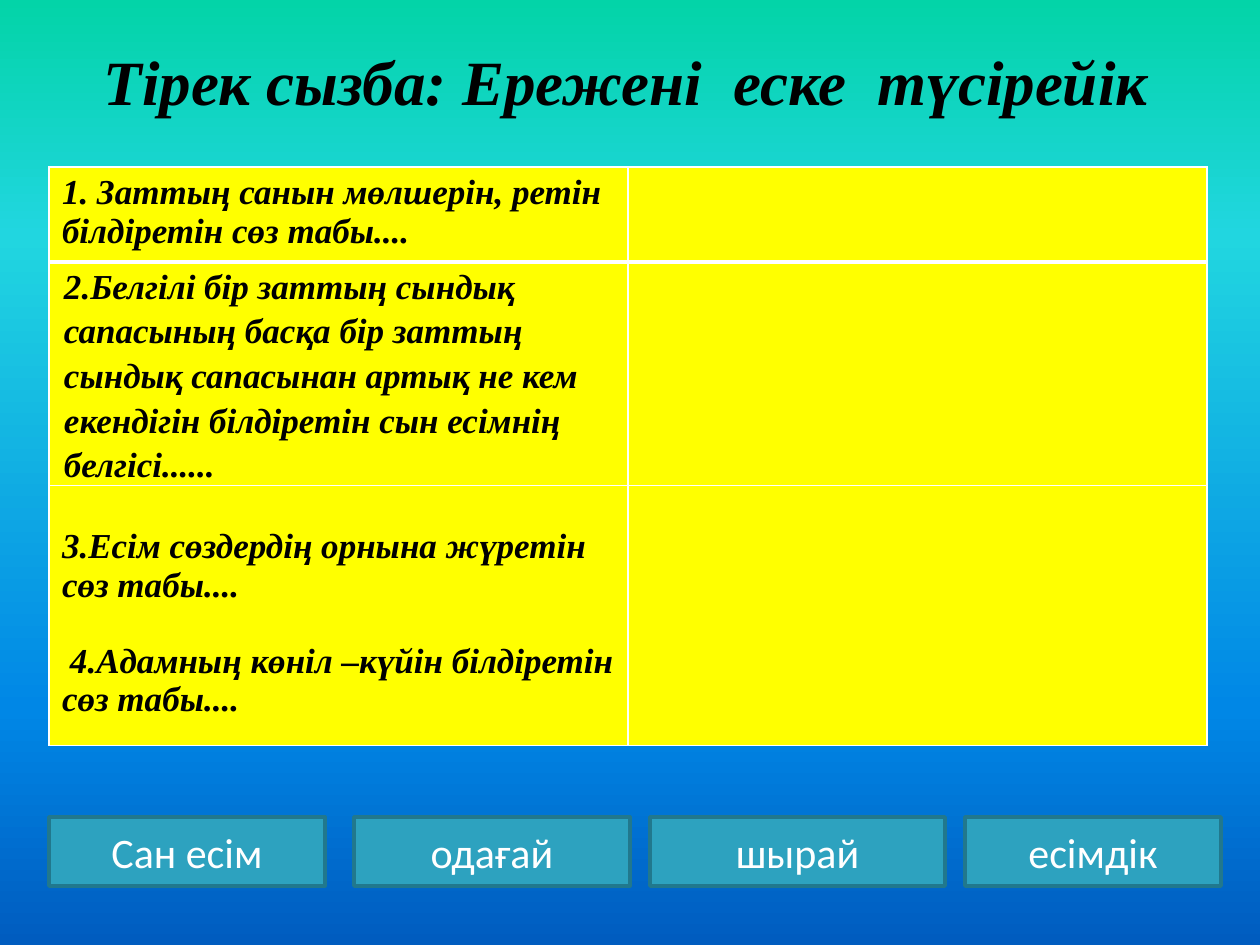
from typing import NamedTuple

from lxml.etree import SubElement
from pptx import Presentation
from pptx.dml.color import RGBColor
from pptx.enum.shapes import MSO_SHAPE as Shape
from pptx.enum.text import MSO_ANCHOR as Anchor, PP_ALIGN as Align
from pptx.oxml.ns import qn
from pptx.util import Emu, Pt

COLORS = {
    "black": "000000", "white": "FFFFFF", "yellow": "FFFF00",
    "teal": "2DA2BF", "edge": "21788D",
}
SKY = {0: "03D4A8", 25: "21D6E0", 75: "0087E6", 100: "005CBF"}
SERIF = "Times New Roman"


class Card(NamedTuple):
    text: str
    left: int
    width: int


class Rule(NamedTuple):
    """A table row: its height, top and side margins, and paragraphs."""
    height: int
    top: int
    side: int
    lines: list[str]
    spacing: float = 1.0


CARDS = [
    Card("Сан есім", 49, 276),
    Card("одағай", 354, 276),
    Card("шырай", 650, 295),
    Card("есімдік", 965, 256),
]
RULES = [
    Rule(95, 6, 13, ["1. Заттың санын мөлшерін, ретін білдіретін сөз табы...."]),
    Rule(223, 0, 15, ["2.Белгілі бір заттың сындық сапасының басқа бір заттың "
                      "сындық сапасынан артық не кем екендігін білдіретін "
                      "сын есімнің белгісі......"], 1.15),
    Rule(260, 42, 13, ["3.Есім сөздердің орнына жүретін сөз табы....",
                       "4.Адамның көніл –күйін білдіретін сөз табы...."]),
]


def px(count: int) -> Emu:
    return Emu(round(count * 914400 / 126))


def rgb(name: str) -> RGBColor:
    return RGBColor.from_string(COLORS[name])


def write(para, text: str, *, size: int, color: str = "black",
          font: str = SERIF, strong: bool = True, align=Align.LEFT) -> None:
    """Put one run in a paragraph; strong means bold italic."""
    para.alignment = align
    run = para.add_run()
    run.text = text
    face = run.font
    face.name, face.size = font, Pt(size)
    face.bold = face.italic = strong
    face.color.rgb = rgb(color)


def add_color(parent, code: str) -> None:
    SubElement(parent, qn("a:srgbClr"), val=code)


def paint_sky(slide) -> None:
    fill = slide.background.fill
    fill.gradient()
    grad = slide.element.find(".//" + qn("a:gradFill"))
    stops = grad.find(qn("a:gsLst"))
    for old in list(stops):
        stops.remove(old)
    for spot, code in SKY.items():
        add_color(SubElement(stops, qn("a:gs"), pos=str(spot * 1000)), code)
    grad.find(qn("a:lin")).set("ang", "5400000")


def style_cell(cell, top: int, base: int) -> None:
    """Fill a cell and give its edges white lines of the given points."""
    props = cell._tc.get_or_add_tcPr()
    for side, width in zip("LRTB", (1, 1, top, base)):
        line = SubElement(props, qn(f"a:ln{side}"), w=str(Pt(width)))
        add_color(SubElement(line, qn("a:solidFill")), COLORS["white"])
    cell.fill.solid()
    cell.fill.fore_color.rgb = rgb("yellow")


def fill_rule(cell, rule: Rule) -> None:
    cell.margin_left = cell.margin_right = px(rule.side)
    cell.margin_top, cell.margin_bottom = px(rule.top), px(min(rule.top, 6))
    frame = cell.text_frame
    for i, text in enumerate(rule.lines):
        para = frame.add_paragraph() if i else frame.paragraphs[0]
        para.line_spacing = rule.spacing
        if i:
            para.space_before = Pt(21)
            para._p.get_or_add_pPr().set("indent", str(px(8)))
        write(para, text, size=20)


def add_rules(slide) -> None:
    high = sum(rule.height for rule in RULES)
    table = slide.shapes.add_table(
        len(RULES), 2, px(49), px(167), px(1158), px(high)).table
    for i, rule in enumerate(RULES):
        table.rows[i].height = px(rule.height)
        for cell in table.rows[i].cells:
            style_cell(cell, 3 if i == 1 else 1, 3 if i == 0 else 1)
        fill_rule(table.cell(i, 0), rule)


def add_card(slide, card: Card) -> None:
    box = slide.shapes.add_shape(
        Shape.RECTANGLE, px(card.left), px(817), px(card.width), px(69))
    box.shadow.inherit = False
    box.fill.solid()
    box.fill.fore_color.rgb = rgb("teal")
    box.line.color.rgb = rgb("edge")
    box.line.width = Pt(2)
    frame = box.text_frame
    frame.word_wrap = True
    frame.vertical_anchor = Anchor.MIDDLE
    write(frame.paragraphs[0], card.text, size=24, color="white",
          font="Calibri", strong=False, align=Align.CENTER)


def add_title(slide) -> None:
    title = slide.shapes.title
    title.left, title.top = px(59), px(20)
    title.width, title.height = px(1134), px(120)
    frame = title.text_frame
    frame.vertical_anchor = Anchor.MIDDLE
    write(frame.paragraphs[0], "Тірек сызба: Ережені  еске  түсірейік",
          size=36, align=Align.CENTER)


def main() -> None:
    deck = Presentation()
    deck.slide_width, deck.slide_height = px(1260), px(945)
    slide = deck.slides.add_slide(deck.slide_layouts[5])
    paint_sky(slide)
    add_title(slide)
    add_rules(slide)
    for card in CARDS:
        add_card(slide, card)
    deck.save("out.pptx")


if __name__ == "__main__":
    main()
